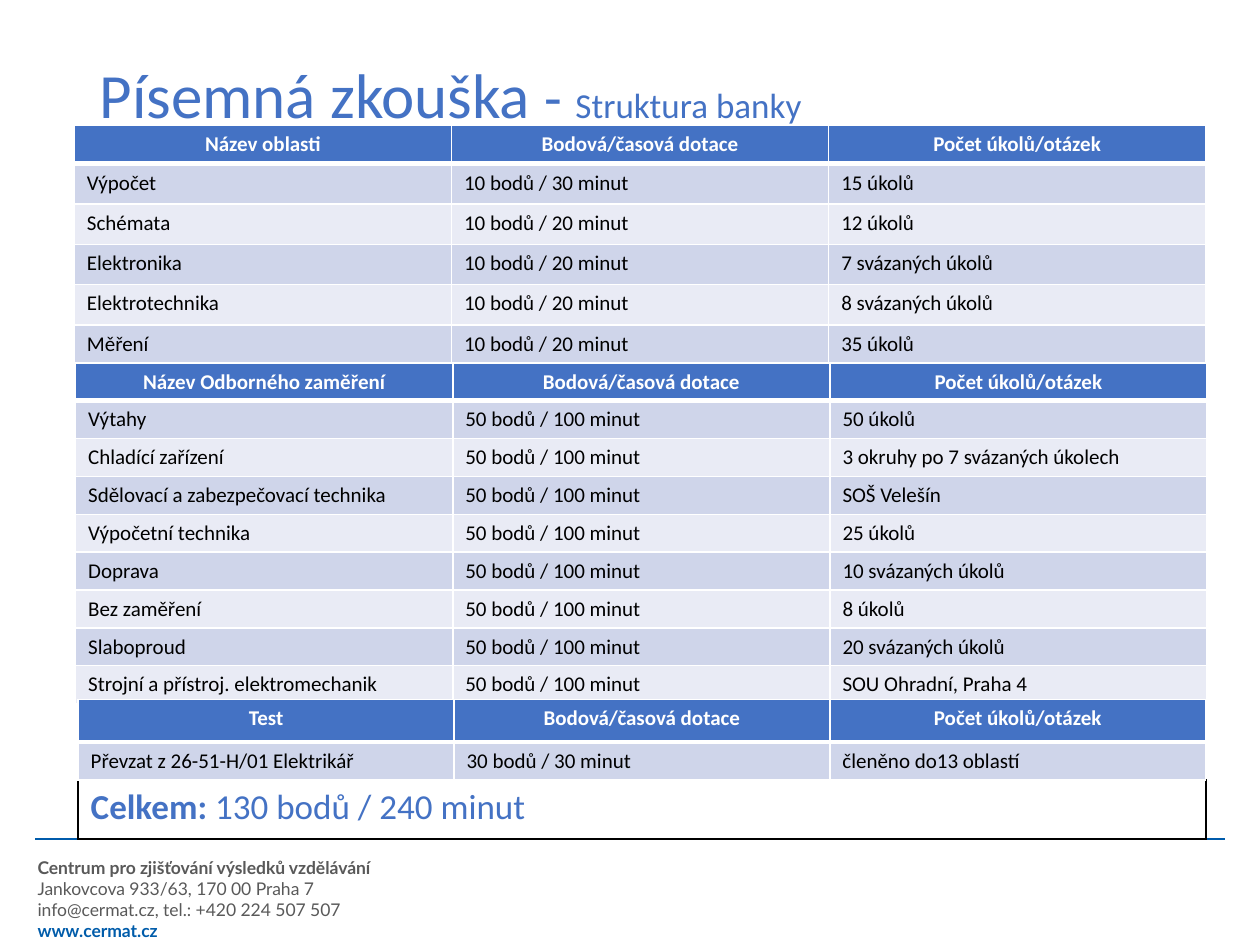
"""Build the slide on the structure of the written exam's question bank."""
import pptx
import pptx.dml.color
import pptx.enum.shapes
import pptx.enum.text
import pptx.oxml
import pptx.oxml.ns
import pptx.util

Inches, Pt = pptx.util.Inches, pptx.util.Pt
Align, Anchor = pptx.enum.text.PP_ALIGN, pptx.enum.text.MSO_ANCHOR

BLUE, WHITE, BLACK, GREY = "4472C4", "FFFFFF", "000000", "595959"
BANDS = ("CFD5EA", "E9EBF5")

TITLE = [("Písemná zkouška ", 36), ("- ", 33), ("Struktura banky", 20)]
HEADS = ("Bodová/časová dotace", "Počet úkolů/otázek")
AREAS = [
    ("Název oblasti", *HEADS),
    ("Výpočet", "10 bodů / 30 minut", "15 úkolů"),
    ("Schémata", "10 bodů / 20 minut", "12 úkolů"),
    ("Elektronika", "10 bodů / 20 minut", "7 svázaných úkolů"),
    ("Elektrotechnika", "10 bodů / 20 minut", "8 svázaných úkolů"),
    ("Měření", "10 bodů / 20 minut", "35 úkolů"),
]
FIELD = "50 bodů / 100 minut"
FIELDS = [
    ("Název Odborného zaměření", *HEADS),
    ("Výtahy", FIELD, "50 úkolů"),
    ("Chladící zařízení", FIELD, "3 okruhy po 7 svázaných úkolech"),
    ("Sdělovací a zabezpečovací technika", FIELD, "SOŠ Velešín"),
    ("Výpočetní technika", FIELD, "25 úkolů"),
    ("Doprava", FIELD, "10 svázaných úkolů"),
    ("Bez zaměření", FIELD, "8 úkolů"),
    ("Slaboproud", FIELD, "20 svázaných úkolů"),
    ("Strojní a přístroj. elektromechanik", FIELD, "SOU Ohradní, Praha 4"),
]
TEST = [
    ("Test", *HEADS),
    ("Převzat z 26-51-H/01 Elektrikář", "30 bodů / 30 minut", "členěno do13 oblastí"),
]
TOTAL = [("Celkem: ", True), ("130 bodů / 240 minut", False)]
FOOTER = [
    ("Centrum pro zjišťování výsledků vzdělávání", GREY, True),
    ("Jankovcova 933/63, 170 00 Praha 7", GREY, False),
    ("info@cermat.cz, tel.: +420 224 507 507", GREY, False),
    ("www.cermat.cz", "005CAA", True),
]


def paint(color, tone):
    color.rgb = pptx.dml.color.RGBColor.from_string(tone)


def write(para, text, size, tone, bold=False, face="Calibri"):
    run = para.add_run()
    run.text = text
    run.font.size, run.font.bold, run.font.name = Pt(size), bold, face
    paint(run.font.color, tone)


def edge(cell, tone, top=1, bottom=1):
    props = cell._tc.get_or_add_tcPr()
    for side, width in (("L", 1), ("R", 1), ("T", top), ("B", bottom)):
        props.append(pptx.oxml.parse_xml(
            f'<a:ln{side} {pptx.oxml.ns.nsdecls("a")} w="{Pt(width)}"><a:solidFill>'
            f'<a:srgbClr val="{tone}"/></a:solidFill></a:ln{side}>'))


def add_grid(slide, box, rows, cols, heights):
    table = slide.shapes.add_table(rows, cols, *map(Inches, box)).table
    for row, height in zip(table.rows, heights):
        row.height = Inches(height)
    return table


def add_bank(slide, left, top, width, heights, data):
    box = (left, top, width, sum(heights))
    table = add_grid(slide, box, len(data), len(data[0]), heights)
    for i, row in enumerate(data):
        head = i == 0
        for j, text in enumerate(row):
            cell = table.cell(i, j)
            edge(cell, WHITE, 3 if i == 1 else 1, 3 if head else 1)
            cell.fill.solid()
            paint(cell.fill.fore_color, BLUE if head else BANDS[(i - 1) % 2])
            para = cell.text_frame.paragraphs[0]
            para.alignment = Align.CENTER if head else Align.LEFT
            write(para, text, 12, WHITE if head else BLACK, head)


def add_total(slide):
    cell = add_grid(slide, (0.62, 6.19, 8.95, 0.47), 1, 1, [0.47]).cell(0, 0)
    edge(cell, BLACK)
    cell.fill.background()
    for text, bold in TOTAL:
        write(cell.text_frame.paragraphs[0], text, 20, BLUE, bold)


def add_footer(slide):
    frame = slide.shapes.add_textbox(*map(Inches, (0.2, 6.75, 9.53, 0.75))).text_frame
    frame.word_wrap = True
    for i, (text, tone, bold) in enumerate(FOOTER):
        para = frame.add_paragraph() if i else frame.paragraphs[0]
        write(para, text, 10, tone, bold, "Lato")
    rule = slide.shapes.add_connector(
        pptx.enum.shapes.MSO_CONNECTOR.STRAIGHT, *map(Inches, (0.28, 6.66, 9.72, 6.66)))
    paint(rule.line.color, "005BAB")
    rule.line.width = Pt(1)
    rule._element.spPr.append(
        pptx.oxml.parse_xml(f'<a:effectLst {pptx.oxml.ns.nsdecls("a")}/>'))


def add_title(slide):
    title = slide.shapes.title
    title.left, title.top, title.width, title.height = map(Inches, (0.69, 0.4, 8.62, 0.75))
    frame = title.text_frame
    frame.auto_size = pptx.enum.text.MSO_AUTO_SIZE.NONE
    frame.vertical_anchor = Anchor.MIDDLE
    para = frame.paragraphs[0]
    para.alignment, para.line_spacing = Align.LEFT, 0.9
    for text, size in TITLE:
        write(para, text, size, BLUE)


def main():
    deck = pptx.Presentation()
    deck.slide_width, deck.slide_height = Inches(10), Inches(7.5)
    slide = deck.slides.add_slide(deck.slide_layouts[5])
    add_footer(slide)
    add_title(slide)
    add_bank(slide, 0.59, 0.99, 8.98, [0.31] + [0.32] * 5, AREAS)
    add_total(slide)
    add_bank(slide, 0.6, 2.88, 8.98, [0.3] * 9, FIELDS)
    add_bank(slide, 0.62, 5.55, 8.95, [0.34, 0.3], TEST)
    deck.save("out.pptx")


if __name__ == "__main__":
    main()
